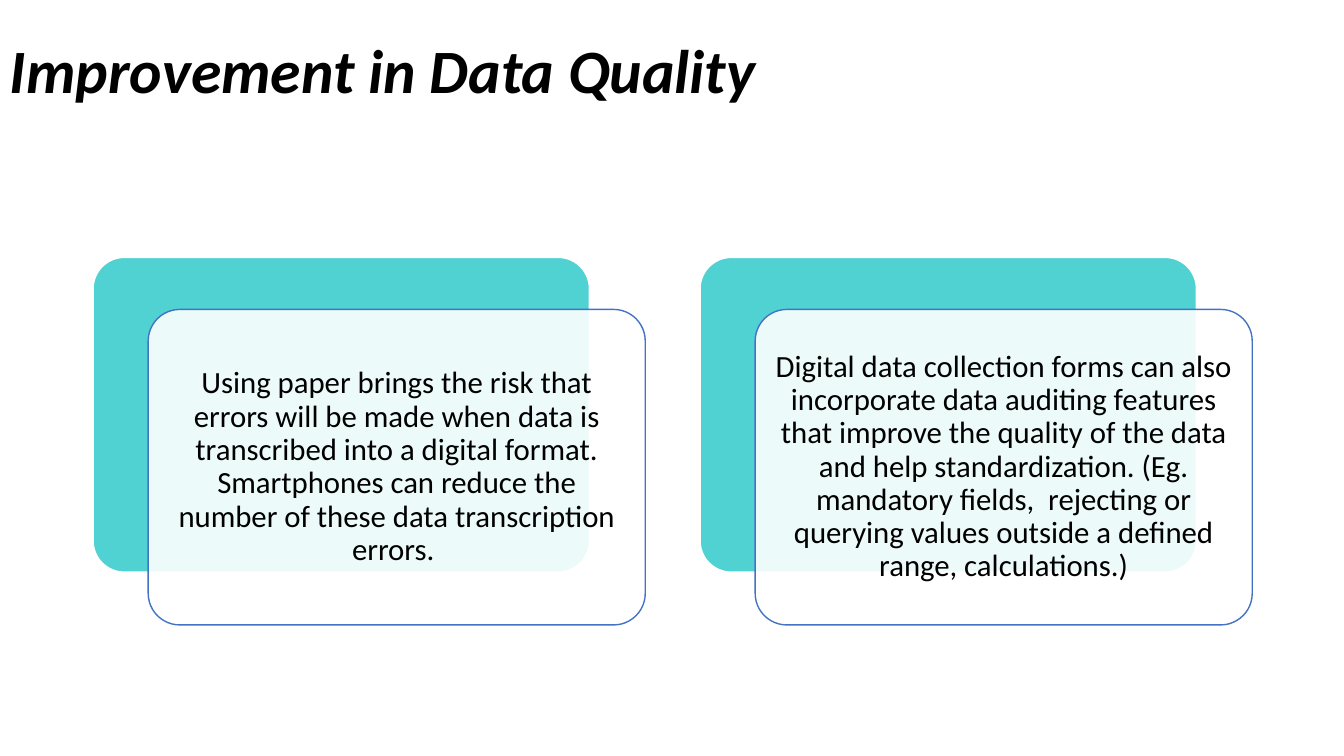
from dataclasses import dataclass

from lxml import etree
from pptx import Presentation
from pptx.dml.color import RGBColor
from pptx.enum.shapes import MSO_SHAPE
from pptx.enum.text import MSO_ANCHOR, PP_ALIGN
from pptx.oxml.ns import qn
from pptx.util import Inches, Pt

ROUNDED = MSO_SHAPE.ROUNDED_RECTANGLE
MIDDLE = MSO_ANCHOR.MIDDLE
LEFT, CENTER = PP_ALIGN.LEFT, PP_ALIGN.CENTER


@dataclass(frozen=True)
class Theme:
    font: str = "Calibri"
    title_size: int = 44
    body_size: int = 22
    text: RGBColor = RGBColor(0x00, 0x00, 0x00)
    white: RGBColor = RGBColor(0xFF, 0xFF, 0xFF)
    teal: RGBColor = RGBColor(0x50, 0xD2, 0xD3)
    blue: RGBColor = RGBColor(0x44, 0x72, 0xC4)


theme = Theme()


def add_panel(s, left, top, fill, line, line_width):
    sp = s.shapes.add_shape(ROUNDED, Inches(left), Inches(top),
                            Inches(PANEL_W), Inches(PANEL_H))
    sp.adjustments[0] = 0.1
    sp.shadow.inherit = False
    sp.fill.solid()
    sp.fill.fore_color.rgb = fill
    sp.line.color.rgb = line
    sp.line.width = Pt(line_width)
    return sp


def write_text(tf, text, size, align, strong=False):
    tf.word_wrap = True
    tf.vertical_anchor = MIDDLE
    p = tf.paragraphs[0]
    p.alignment = align
    p.line_spacing = 0.9
    r = p.add_run()
    r.text = text
    r.font.name = theme.font
    r.font.size = Pt(size)
    r.font.color.rgb = theme.text
    r.font.bold = r.font.italic = strong


prs = Presentation()
prs.slide_width, prs.slide_height = Inches(13.33), Inches(7.5)
s = prs.slides.add_slide(prs.slide_layouts[6])

# Title
title = s.shapes.add_textbox(0, 0, Inches(11.5), Inches(1.45))
write_text(title.text_frame, "Improvement in Data Quality",
           theme.title_size, LEFT, strong=True)

# Cards: a teal panel with a translucent text panel offset in front
PANEL_W, PANEL_H = 4.93, 3.13
FIRST_LEFT, TOP, PITCH = 0.92, 2.55, 6.02
OFFSET_X, OFFSET_Y = 0.55, 0.52
INSET = Inches(0.09)

benefits = [
    "Using paper brings the risk that errors will be made when data is "
    "transcribed into a digital format. Smartphones can reduce the number "
    "of these data transcription errors. ",
    "Digital data collection forms can also incorporate data auditing "
    "features that improve the quality of the data and help "
    "standardization. (Eg. mandatory fields,  rejecting or querying values "
    "outside a defined range, calculations.)",
]

for i, benefit in enumerate(benefits):
    left = FIRST_LEFT + i * PITCH
    add_panel(s, left, TOP, theme.teal, theme.white, 1.5)
    card = add_panel(s, left + OFFSET_X, TOP + OFFSET_Y,
                     theme.white, theme.blue, 1)

    # 90% opacity
    color = card.fill._xPr.find(qn("a:solidFill"))[0]
    etree.SubElement(color, qn("a:alpha")).set("val", "90000")

    tf = card.text_frame
    tf.margin_left = tf.margin_right = INSET
    tf.margin_top = tf.margin_bottom = INSET
    write_text(tf, benefit, theme.body_size, CENTER)

prs.save("out.pptx")
